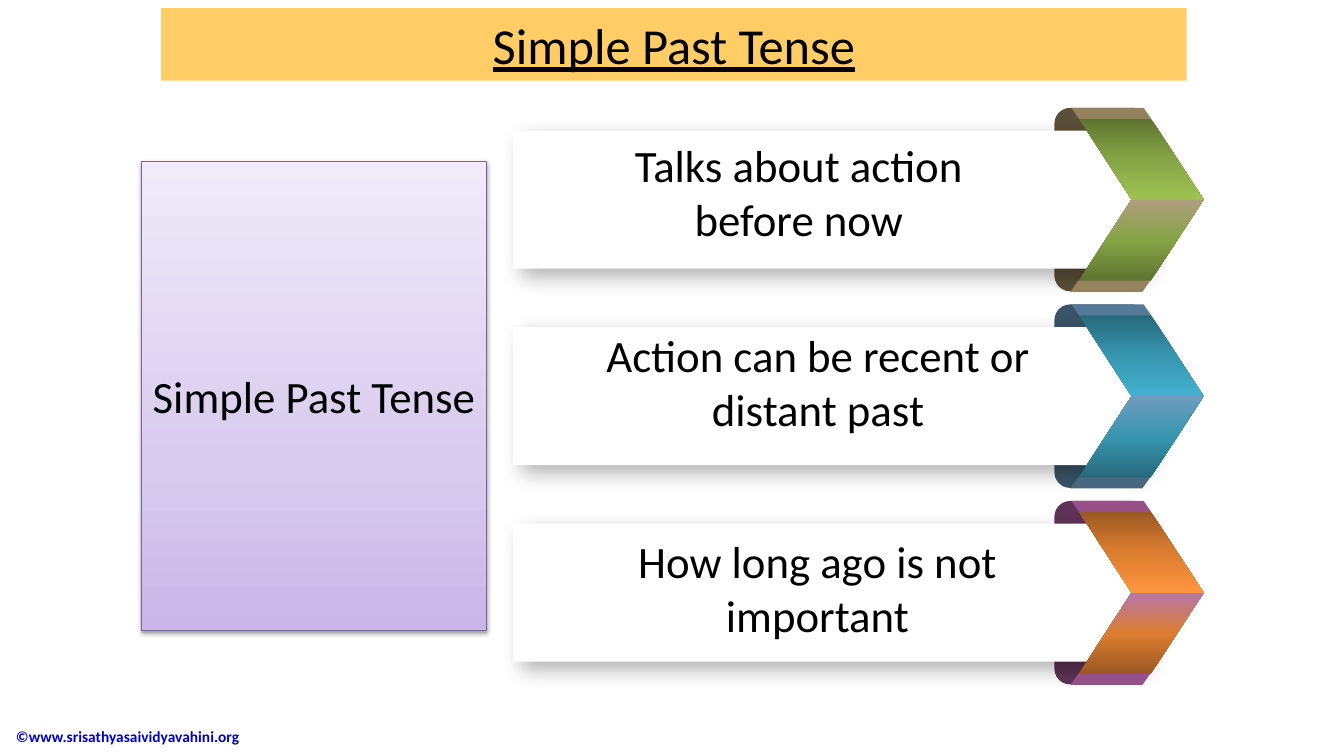
from dataclasses import dataclass

from lxml.etree import SubElement
from pptx import Presentation
from pptx.dml.color import RGBColor
from pptx.enum.shapes import MSO_SHAPE
from pptx.enum.text import MSO_ANCHOR, PP_ALIGN
from pptx.oxml.ns import qn
from pptx.util import Inches, Pt


@dataclass(frozen=True)
class Theme:
    font: str = "Calibri"
    title_size: int = 36
    body_size: int = 32
    credit_size: int = 11
    ink: str = "000000"
    paper: str = "FFFFFF"
    title_fill: str = "FFCC66"
    credit: str = "0000CC"
    panel_line: str = "7D60A0"
    panel: tuple = ((0, "C9B5E8"), (35, "D8CBEE"), (100, "F0EAF9"))


@dataclass(frozen=True)
class Ribbon:
    back: str
    dark: str
    middle: str
    upper_tip: str
    lower_tip: str
    upper_edge: str
    lower_edge: str


GREEN = Ribbon("5A4F38", "5D7330", "85A445", "9EC252", "AE9E7E", "94825D", "94825D")
BLUE = Ribbon("3A5468", "27697B", "3795AF", "42B1CF", "6E9BBF", "557A97", "486880")
ORANGE = Ribbon("5F3357", "9A5822", "DB7D30", "FF953E", "B676AA", "965189", "965189")


class Deck:
    """Places elements on a grid of 100 columns by 100 rows."""

    def __init__(self, prs, theme):
        self.theme = theme
        self.s = prs.slides.add_slide(prs.slide_layouts[6])
        self.col, self.row = prs.slide_width / 100, prs.slide_height / 100

    def place(self, x, y, w, h):
        return (round(x * self.col), round(y * self.row),
                round(w * self.col), round(h * self.row))

    def shape(self, kind, box, fill, line=None, adj=None, flip=False, shadow=None):
        sp = self.s.shapes.add_shape(kind, *self.place(*box))
        if adj is not None:
            sp.adjustments[0] = adj
        if flip:
            sp._element.spPr.find(qn("a:xfrm")).set("flipV", "1")
        if isinstance(fill, str):
            sp.fill.solid()
            sp.fill.fore_color.rgb = RGBColor.from_string(fill)
        else:
            self.gradient(sp, fill)
        if line:
            sp.line.color.rgb = RGBColor.from_string(line)
            sp.line.width = Pt(0.75)
        else:
            sp.line.fill.background()
        sp.shadow.inherit = False
        if shadow:
            self.shadow(sp, *shadow)
        return sp

    def gradient(self, sp, stops):
        sp.fill.gradient()
        sp.fill.gradient_angle = 90
        stop_list = sp._element.spPr.find(qn("a:gradFill")).find(qn("a:gsLst"))
        for old in list(stop_list):
            stop_list.remove(old)
        for position, color in stops:
            stop = SubElement(stop_list, qn("a:gs"), pos=str(position * 1000))
            SubElement(stop, qn("a:srgbClr"), val=color)

    def shadow(self, sp, alpha, blur, distance, angle):
        effects = sp._element.spPr.find(qn("a:effectLst"))
        outer = SubElement(effects, qn("a:outerShdw"), blurRad=str(Pt(blur)),
                           dist=str(Pt(distance)), dir=str(angle * 60000),
                           rotWithShape="0")
        color = SubElement(outer, qn("a:srgbClr"), val=self.theme.ink)
        SubElement(color, qn("a:alpha"), val=str(alpha * 1000))

    def add_text(self, sp, text, size, color=None, align=PP_ALIGN.CENTER,
                 anchor=MSO_ANCHOR.MIDDLE, bold=False, underline=False):
        tf = sp.text_frame
        tf.word_wrap = True
        tf.vertical_anchor = anchor
        p = tf.paragraphs[0]
        p.alignment = align
        r = p.add_run()
        r.text = text
        r.font.name, r.font.size = self.theme.font, Pt(size)
        r.font.bold, r.font.underline = bold, underline
        r.font.color.rgb = RGBColor.from_string(color or self.theme.ink)

    def label(self, box, text, size, **style):
        self.add_text(self.s.shapes.add_textbox(*self.place(*box)), text, size, **style)

    def banner(self, y, ribbon, text, text_x, text_dy, text_w):
        slant = MSO_SHAPE.PARALLELOGRAM
        # Ribbon back and white card
        self.shape(MSO_SHAPE.ROUNDED_RECTANGLE, (78.45, y, 7.05, 24.27), ribbon.back)
        self.shape(MSO_SHAPE.RECTANGLE, (38.18, y + 3, 46.8, 18.27),
                   self.theme.paper, shadow=(30, 15, 8, 45))
        # Two halves of the arrow, lower then upper
        for dy, tip, flip in ((12.13, ribbon.lower_tip, False),
                              (1.33, ribbon.upper_tip, True)):
            stops = ((0, ribbon.dark), (50, ribbon.middle), (100, tip))
            self.shape(slant, (80.25, y + dy, 9.3, 10.8), stops, adj=0.65, flip=flip)
        # Folded edges
        self.shape(slant, (79.73, y, 5.93, 1.47), ribbon.upper_edge, adj=0.68, flip=True)
        self.shape(slant, (79.65, y + 22.87, 5.93, 1.47), ribbon.lower_edge, adj=0.7)
        self.label((text_x, y + text_dy, text_w, 15.73), text,
                   self.theme.body_size, anchor=MSO_ANCHOR.TOP)


def main():
    prs = Presentation()
    prs.slide_width, prs.slide_height = Inches(13.33), Inches(7.5)
    theme = Theme()
    deck = Deck(prs, theme)

    # Copyright line
    deck.label((0.45, 94.67, 26.5, 5.4), "©www.srisathyasaividyavahini.org",
               theme.credit_size, color=theme.credit, align=PP_ALIGN.LEFT, bold=True)

    # Title bar
    title = deck.shape(MSO_SHAPE.RECTANGLE, (12, 1.07, 76.3, 9.6), theme.title_fill)
    deck.add_text(title, "Simple Past Tense", theme.title_size, underline=True)

    # Three banners at equal steps
    banners = (
        (GREEN, "Talks about action before now", 42.3, 3.33, 34.28),
        (BLUE, "Action can be recent or distant past", 43.73, 2.4, 34.28),
        (ORANGE, "How long ago is not important", 46.65, 3.73, 28.35),
    )
    for i, banner in enumerate(banners):
        deck.banner(14.27 + 26 * i, *banner)

    # Topic panel
    panel = deck.shape(MSO_SHAPE.RECTANGLE, (10.5, 21.33, 25.73, 62.13), theme.panel,
                       line=theme.panel_line, shadow=(38, 3.1, 1.6, 90))
    deck.add_text(panel, "Simple Past Tense", theme.body_size)

    prs.save("out.pptx")


if __name__ == "__main__":
    main()
